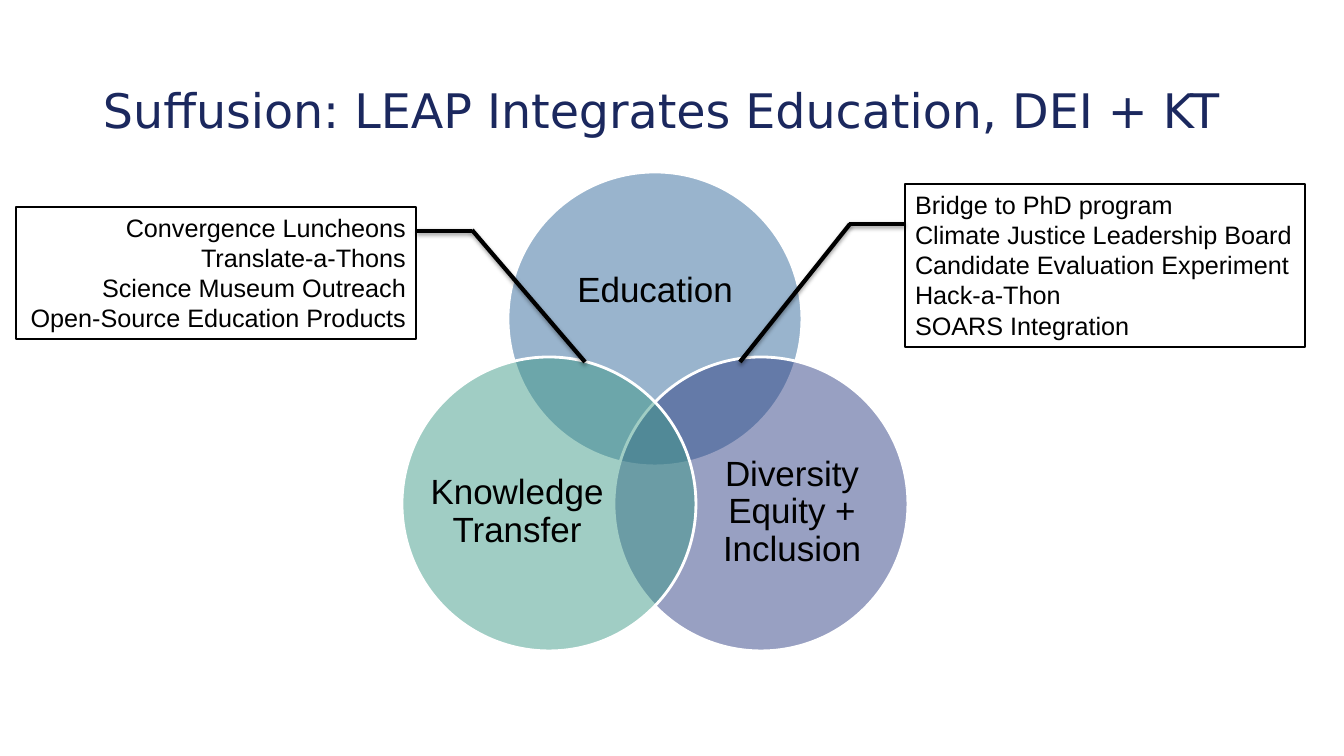
from lxml.etree import SubElement
from pptx import Presentation
from pptx.dml.color import RGBColor
from pptx.enum.shapes import MSO_CONNECTOR, MSO_SHAPE
from pptx.enum.text import MSO_ANCHOR, PP_ALIGN
from pptx.oxml.ns import qn
from pptx.util import Pt

PX = 914400 / 100.8
DIAMETER = 294


def paint(color_format, color, alpha=None):
    """Set a hex colour, with an optional opacity in percent."""
    color_format.rgb = RGBColor.from_string(color)
    if alpha is not None:
        solid_fill = color_format._xFill
        SubElement(solid_fill[0], qn("a:alpha"), val=str(alpha * 1000))


def write(shape, lines, size, color="000000", font="Arial", align=PP_ALIGN.LEFT,
          anchor=MSO_ANCHOR.MIDDLE, spacing=None, inset=(10, 5)):
    frame = shape.text_frame
    frame.word_wrap = True
    frame.vertical_anchor = anchor
    frame.margin_left = frame.margin_right = round(inset[0] * PX)
    frame.margin_top = frame.margin_bottom = round(inset[1] * PX)
    frame.text = "\n".join(lines)
    for paragraph in frame.paragraphs:
        paragraph.alignment = align
        paragraph.line_spacing = spacing
        paragraph.font.size = Pt(size)
        paragraph.font.name = font
        paint(paragraph.font.color, color)


presentation = Presentation()
presentation.slide_width = round(1344 * PX)
presentation.slide_height = round(756 * PX)
slide = presentation.slides.add_slide(presentation.slide_layouts[5])
shapes = slide.shapes

title = shapes.title
title.left, title.top, title.width, title.height = [
    round(length * PX) for length in (93, 40, 1222, 146)]
write(title, ["Suffusion: LEAP Integrates Education, DEI + KT"], 34,
      color="1B285E", font="DejaVu Sans", spacing=0.9)

# Venn diagram: circle corner, colour, label and label box
circles = [
    (508, 172, "2F669A", "Education", (547, 225, 216, 132)),
    (614, 357, "2D3F83", "Diversity Equity + Inclusion", (704, 432, 176, 161)),
    (402, 357, "3E9987", "Knowledge Transfer", (429, 432, 176, 161)),
]
for left, top, color, text, label_box in circles:
    circle = shapes.add_shape(MSO_SHAPE.OVAL, *[
        round(length * PX) for length in (left, top, DIAMETER, DIAMETER)])
    circle.shadow.inherit = False
    circle.fill.solid()
    paint(circle.fill.fore_color, color, alpha=49)
    paint(circle.line.color, "FFFFFF")
    circle.line.width = Pt(2)
    label = shapes.add_textbox(*[round(length * PX) for length in label_box])
    write(label, [text], 25, align=PP_ALIGN.CENTER, spacing=0.9, inset=(0, 0))

# Callout boxes
callouts = [
    ((16, 207, 400, 132), PP_ALIGN.RIGHT,
     ["Convergence Luncheons", "Translate-a-Thons", "Science Museum Outreach",
      "Open-Source Education Products"]),
    ((905, 184, 400, 163), PP_ALIGN.LEFT,
     ["Bridge to PhD program", "Climate Justice Leadership Board",
      "Candidate Evaluation Experiment", "Hack-a-Thon", "SOARS Integration"]),
]
for box, align, lines in callouts:
    callout = shapes.add_shape(MSO_SHAPE.RECTANGLE, *[round(length * PX) for length in box])
    callout.shadow.inherit = False
    callout.fill.background()
    paint(callout.line.color, "000000")
    callout.line.width = Pt(1.5)
    write(callout, lines, 18, align=align, anchor=MSO_ANCHOR.TOP)

# Leader lines from the callouts to the overlaps
leaders = [
    (740, 362, 850, 224),
    (849, 224, 905, 224),
    (417, 231, 472, 231),
    (472, 230, 585, 362),
]
for ends in leaders:
    leader = shapes.add_connector(MSO_CONNECTOR.STRAIGHT, *[round(end * PX) for end in ends])
    paint(leader.line.color, "000000")
    leader.line.width = Pt(3)
    effects = SubElement(leader._element.spPr, qn("a:effectLst"))
    shadow = SubElement(effects, qn("a:outerShdw"), blurRad=str(Pt(3.1)), dist=str(Pt(1.6)),
                        dir="5400000", rotWithShape="0")
    shadow_color = SubElement(shadow, qn("a:srgbClr"), val="000000")
    SubElement(shadow_color, qn("a:alpha"), val="38000")

presentation.save("out.pptx")
